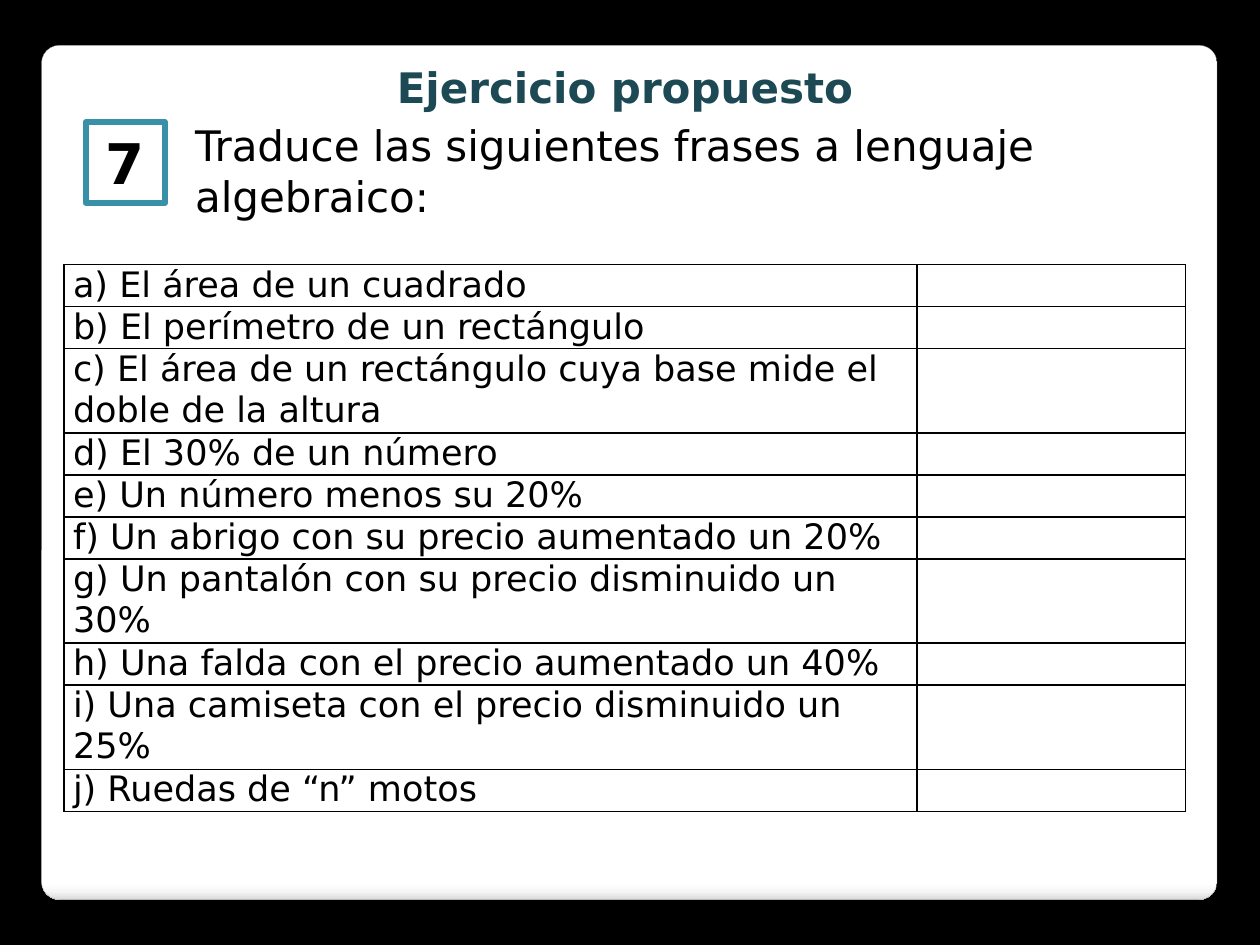
from lxml.etree import SubElement
from pptx import Presentation
from pptx.dml.color import RGBColor
from pptx.enum.shapes import MSO_SHAPE as Shape
from pptx.enum.text import MSO_ANCHOR as Anchor, PP_ALIGN as Align
from pptx.oxml import parse_xml
from pptx.oxml.ns import nsdecls, qn
from pptx.util import Inches, Pt

# Content
TITLE = "Ejercicio propuesto"
NUMBER = "7"
TASK = "Traduce las siguientes frases a lenguaje algebraico:"
# Phrase and the number of text lines it takes
PHRASES = [
    ("a) El área de un cuadrado", 1),
    ("b) El perímetro de un rectángulo", 1),
    ("c) El área de un rectángulo cuya base mide el doble de la altura", 2),
    ("d) El 30% de un número", 1),
    ("e) Un número menos su 20%", 1),
    ("f) Un abrigo con su precio aumentado un 20%", 1),
    ("g) Un pantalón con su precio disminuido un 30%", 2),
    ("h) Una falda con el precio aumentado un 40%", 1),
    ("i) Una camiseta con el precio disminuido un 25%", 2),
    ("j) Ruedas de “n” motos", 1),
]

# Style
FONT = "DejaVu Sans"
BLACK = RGBColor(0x00, 0x00, 0x00)
WHITE = RGBColor(0xFF, 0xFF, 0xFF)
GRAY = RGBColor(0xA4, 0xA4, 0xA4)
NAVY = RGBColor(0x1C, 0x49, 0x54)
TEAL = RGBColor(0x38, 0x91, 0xA7)
PANEL_STOPS = [
    (0, WHITE),
    (98, WHITE),
    (99, RGBColor(0xF7, 0xF7, 0xF7)),
    (100, RGBColor(0xDA, 0xDA, 0xDA)),
]

# Layout in inches: left, top, width, height
PANEL = (0.33, 0.36, 9.33, 6.78)
TITLE_BOX = (0.35, 0.44, 9.22, 0.5)
BADGE = (0.68, 0.97, 0.63, 0.64)
TASK_BOX = (1.45, 0.9, 7.87, 0.91)
TABLE = (0.51, 2.1, 8.9, 4.33)
COLUMNS = (6.77, 2.13)


def inches(box):
    return [Inches(v) for v in box]


def write(tf, text, size, color=BLACK, bold=False, align=Align.LEFT):
    tf.word_wrap = True
    p = tf.paragraphs[0]
    p.text = text
    p.alignment = align
    p.font.name, p.font.size, p.font.bold = FONT, Pt(size), bold
    p.font.color.rgb = color


def add_panel(slide):
    sp = slide.shapes.add_shape(Shape.ROUNDED_RECTANGLE, *inches(PANEL))
    sp.adjustments[0] = 0.021
    sp.shadow.inherit = False
    sp.line.color.rgb = GRAY
    sp.line.width = Pt(0.16)
    sp.fill.gradient()
    sp.fill.gradient_angle = 270
    stops = sp._element.spPr.find(qn("a:gradFill")).find(qn("a:gsLst"))
    for old in list(stops):
        stops.remove(old)
    for share, color in PANEL_STOPS:
        gs = SubElement(stops, qn("a:gs"), pos=str(share * 1000))
        SubElement(gs, qn("a:srgbClr"), val=str(color))
    # Send the panel behind the title
    slide.shapes._spTree.insert(2, sp._element)


def add_borders(cell):
    tc_pr = cell._tc.get_or_add_tcPr()
    for i, side in enumerate(("lnL", "lnR", "lnT", "lnB")):
        tc_pr.insert(i, parse_xml(
            f'<a:{side} {nsdecls("a")} w="{Pt(1)}"><a:solidFill>'
            f'<a:srgbClr val="{BLACK}"/></a:solidFill></a:{side}>'))


def add_phrases(slide):
    table = slide.shapes.add_table(len(PHRASES), len(COLUMNS), *inches(TABLE)).table
    table.first_row = table.horz_banding = False
    for column, width in zip(table.columns, COLUMNS):
        column.width = Inches(width)
    line_height = TABLE[3] / sum(lines for _, lines in PHRASES)
    for row, (phrase, lines) in zip(table.rows, PHRASES):
        row.height = Inches(lines * line_height)
        for cell in row.cells:
            cell.margin_left = cell.margin_right = Inches(0.07)
            cell.margin_top = cell.margin_bottom = 0
            cell.fill.background()
            add_borders(cell)
        write(row.cells[0].text_frame, phrase, 20)


def main():
    prs = Presentation()
    prs.slide_width, prs.slide_height = Inches(10), Inches(7.5)
    slide = prs.slides.add_slide(prs.slide_layouts[5])
    slide.background.fill.solid()
    slide.background.fill.fore_color.rgb = BLACK
    add_panel(slide)

    # Title
    title = slide.shapes.title
    title.left, title.top, title.width, title.height = inches(TITLE_BOX)
    write(title.text_frame, TITLE, 24, NAVY, True, Align.CENTER)

    # Exercise number
    badge = slide.shapes.add_shape(Shape.RECTANGLE, *inches(BADGE))
    badge.shadow.inherit = False
    badge.fill.solid()
    badge.fill.fore_color.rgb = WHITE
    badge.line.color.rgb = TEAL
    badge.line.width = Pt(3.35)
    badge.text_frame.vertical_anchor = Anchor.MIDDLE
    write(badge.text_frame, NUMBER, 32, bold=True, align=Align.CENTER)

    # Task and phrases
    task = slide.shapes.add_textbox(*inches(TASK_BOX))
    write(task.text_frame, TASK, 24)
    add_phrases(slide)
    prs.save("out.pptx")


if __name__ == "__main__":
    main()
